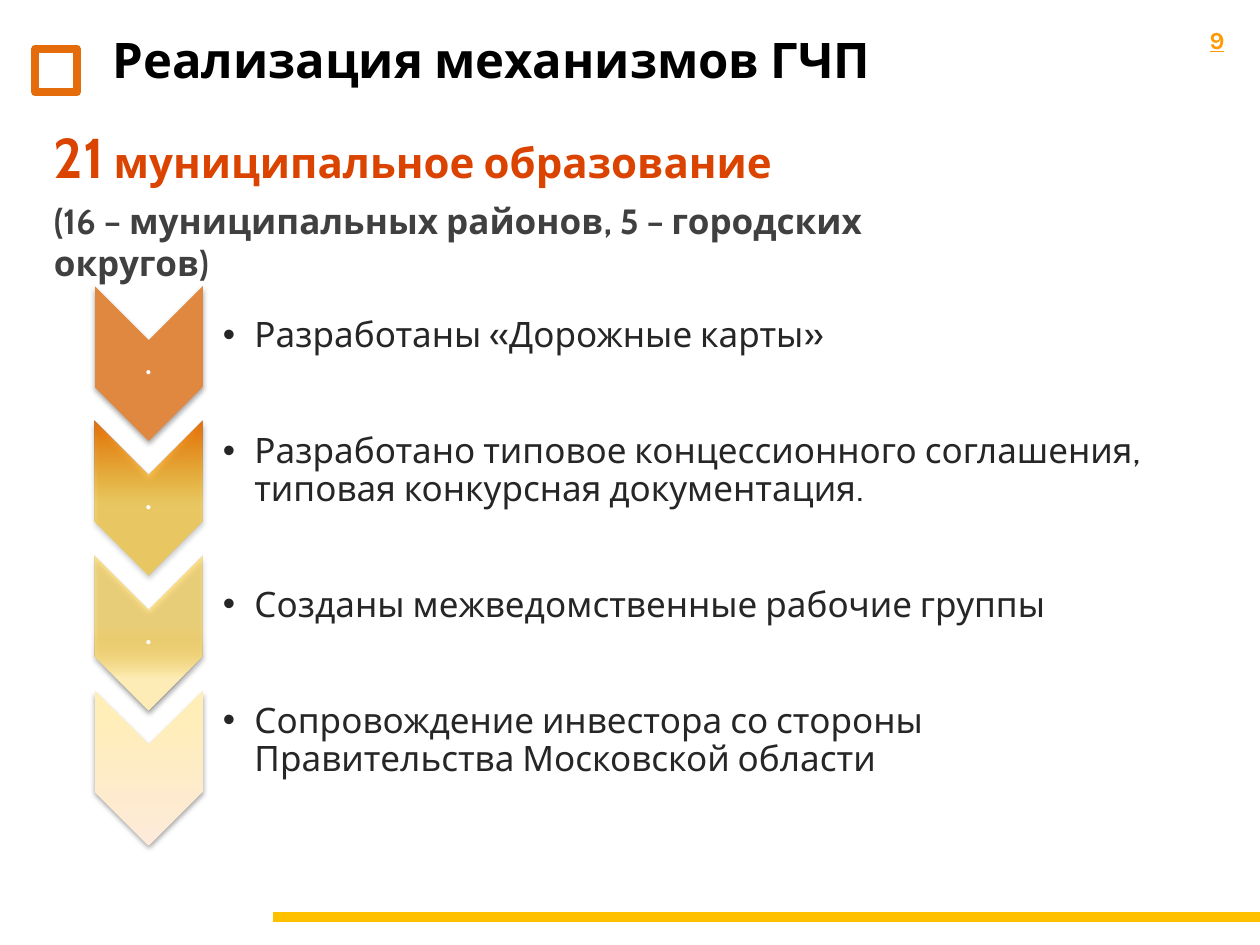
from lxml import etree
from pptx import Presentation
from pptx.dml.color import RGBColor
from pptx.enum import shapes, text
from pptx.oxml import ns
from pptx.util import Inches, Pt

BLACK = RGBColor(0x00, 0x00, 0x00)
WHITE = RGBColor(0xFF, 0xFF, 0xFF)
ORANGE = RGBColor(0xE4, 0x6C, 0x0A)
SOFT_ORANGE = RGBColor(0xE0, 0x88, 0x40)
NUMBER_ORANGE = RGBColor(0xFF, 0x99, 0x00)
RED_ORANGE = RGBColor(0xDA, 0x43, 0x00)
GOLD = RGBColor(0xFF, 0xC0, 0x00)
CREAM = RGBColor(0xFF, 0xEE, 0xB7)
PEACH = RGBColor(0xFD, 0xEA, 0xDA)
DARK_GRAY = RGBColor(0x40, 0x40, 0x40)
TEXT_GRAY = RGBColor(0x26, 0x26, 0x26)

STEPS = [
    ("Разработаны «Дорожные карты»", ".", [(0, SOFT_ORANGE, 100), (100, SOFT_ORANGE, 100)], 90),
    ("Разработано типовое концессионного соглашения, типовая конкурсная документация.",
     ".", [(47, GOLD, 53), (100, ORANGE, 100)], 270),
    ("Созданы межведомственные рабочие группы",
     ".", [(21, CREAM, 100), (54, GOLD, 44)], 270),
    ("Сопровождение инвестора со стороны Правительства Московской области",
     "", [(13, CREAM, 100), (100, PEACH, 100)], 90),
]


def add_element(parent, tag, **attributes):
    element = etree.SubElement(parent, ns.qn(tag))
    for name, value in attributes.items():
        element.set(name, str(value))
    return element


def add_color(parent, color, opacity):
    element = add_element(parent, "a:srgbClr", val=color)
    if opacity < 100:
        add_element(element, "a:alpha", val=opacity * 1000)


def style_run(run, size, color, font="Cabin", bold=False):
    run.font.size = Pt(size)
    run.font.name = font
    run.font.bold = bold
    run.font.color.rgb = color


def add_text_frame(slide, left, top, width, height, insets=(0.1, 0.05, 0.1, 0.05)):
    box = slide.shapes.add_textbox(Inches(left), Inches(top), Inches(width), Inches(height))
    frame = box.text_frame
    frame.word_wrap = True
    (frame.margin_left, frame.margin_top,
     frame.margin_right, frame.margin_bottom) = map(Inches, insets)
    return frame


def add_header(slide, left, top, width, height):
    marker = slide.shapes.add_shape(
        shapes.MSO_SHAPE.RECTANGLE, Inches(left), Inches(top + 0.39), Inches(0.33), Inches(0.34))
    marker.shadow.inherit = False
    marker.fill.background()
    marker.line.color.rgb = ORANGE
    marker.line.width = Pt(4.75)

    title = slide.shapes.add_shape(
        shapes.MSO_SHAPE.ROUNDED_RECTANGLE, Inches(left + 0.47), Inches(top),
        Inches(width - 0.88), Inches(height))
    title.shadow.inherit = False
    title.fill.background()
    title.line.fill.background()
    frame = title.text_frame
    frame.text = "Реализация механизмов ГЧП"
    frame.vertical_anchor = text.MSO_ANCHOR.MIDDLE
    frame.paragraphs[0].alignment = text.PP_ALIGN.LEFT
    style_run(frame.paragraphs[0].runs[0], 28, BLACK, bold=True)

    number = add_text_frame(slide, left + width - 0.4, top + 0.2, 0.14, 0.24, (0, 0, 0, 0))
    number.word_wrap = False
    number.text = "9"
    run = number.paragraphs[0].runs[0]
    style_run(run, 14, NUMBER_ORANGE, "Karla", bold=True)
    run.font.underline = True


def add_summary(slide, left, top, width, height):
    frame = add_text_frame(slide, left, top, width, height)
    lines = [
        [("21", 32, RED_ORANGE), (" муниципальное образование", 24, RED_ORANGE)],
        [("(16 – муниципальных районов, 5 – городских округов)", 20, DARK_GRAY)],
    ]
    for index, line in enumerate(lines):
        paragraph = frame.add_paragraph() if index else frame.paragraphs[0]
        paragraph.space_after = Pt(6)
        for words, size, color in line:
            run = paragraph.add_run()
            run.text = words
            style_run(run, size, color, bold=True)


def add_chevron(slide, left, top, width, height, stops, angle):
    chevron = slide.shapes.add_shape(
        shapes.MSO_SHAPE.CHEVRON, Inches(left + (width - height) / 2),
        Inches(top + (height - width) / 2), Inches(height), Inches(width))
    chevron.rotation = 90
    chevron.line.fill.background()
    chevron.shadow.inherit = False

    properties = chevron.element.spPr
    gradient = etree.Element(ns.qn("a:gradFill"), rotWithShape="0")
    stop_list = add_element(gradient, "a:gsLst")
    for position, color, opacity in stops:
        add_color(add_element(stop_list, "a:gs", pos=position * 1000), color, opacity)
    add_element(gradient, "a:lin", ang=angle * 60000, scaled=0)
    properties.find(ns.qn("a:prstGeom")).addnext(gradient)

    shadow = add_element(
        properties.find(ns.qn("a:effectLst")), "a:outerShdw", blurRad=Pt(3.1), dist=Pt(1.8),
        dir=90 * 60000, rotWithShape=0)
    add_color(shadow, BLACK, 35)


def add_step(slide, left, top, width, height, words, mark, stops, angle):
    chevron_width = 0.86
    add_chevron(slide, left, top, chevron_width, 1.23, stops, angle)
    if mark:
        frame = add_text_frame(slide, left, top + 0.43, chevron_width, 0.37, (0.01,) * 4)
        frame.text = mark
        frame.vertical_anchor = text.MSO_ANCHOR.MIDDLE
        frame.paragraphs[0].alignment = text.PP_ALIGN.CENTER
        frame.paragraphs[0].line_spacing = 0.9
        style_run(frame.paragraphs[0].runs[0], 20, WHITE, "Calibri")

    frame = add_text_frame(
        slide, left + chevron_width, top, width - chevron_width, height, (0.16, 0.01, 0.01, 0.01))
    frame.text = words
    frame.vertical_anchor = text.MSO_ANCHOR.MIDDLE
    paragraph = frame.paragraphs[0]
    paragraph.line_spacing = 0.9
    style_run(paragraph.runs[0], 20, TEXT_GRAY)
    properties = paragraph._p.get_or_add_pPr()
    properties.set("marL", str(Inches(0.25)))
    properties.set("indent", str(Inches(-0.25)))
    add_element(properties, "a:buFont", typeface="Arial")
    add_element(properties, "a:buChar", char="•")


def add_steps(slide, left, top, width, pitch):
    for index, step in enumerate(STEPS):
        add_step(slide, left, top + index * pitch, width, 0.8, *step)


def add_footer_line(slide, left, top, width):
    line = slide.shapes.add_connector(
        shapes.MSO_CONNECTOR.STRAIGHT, Inches(left), Inches(top), Inches(left + width), Inches(top))
    line.line.color.rgb = GOLD
    line.line.width = Pt(5.5)
    add_element(line.element.spPr, "a:effectLst")


def main():
    presentation = Presentation()
    presentation.slide_width = Inches(10)
    presentation.slide_height = Inches(7.5)
    slide = presentation.slides.add_slide(presentation.slide_layouts[6])
    add_footer_line(slide, 2.17, 7.28, 7.83)
    add_header(slide, 0.28, 0, 9.72, 0.94)
    add_summary(slide, 0.33, 0.92, 7.17, 1.06)
    add_steps(slide, 0.75, 2.27, 8.42, 1.07)
    presentation.save("out.pptx")


if __name__ == "__main__":
    main()
